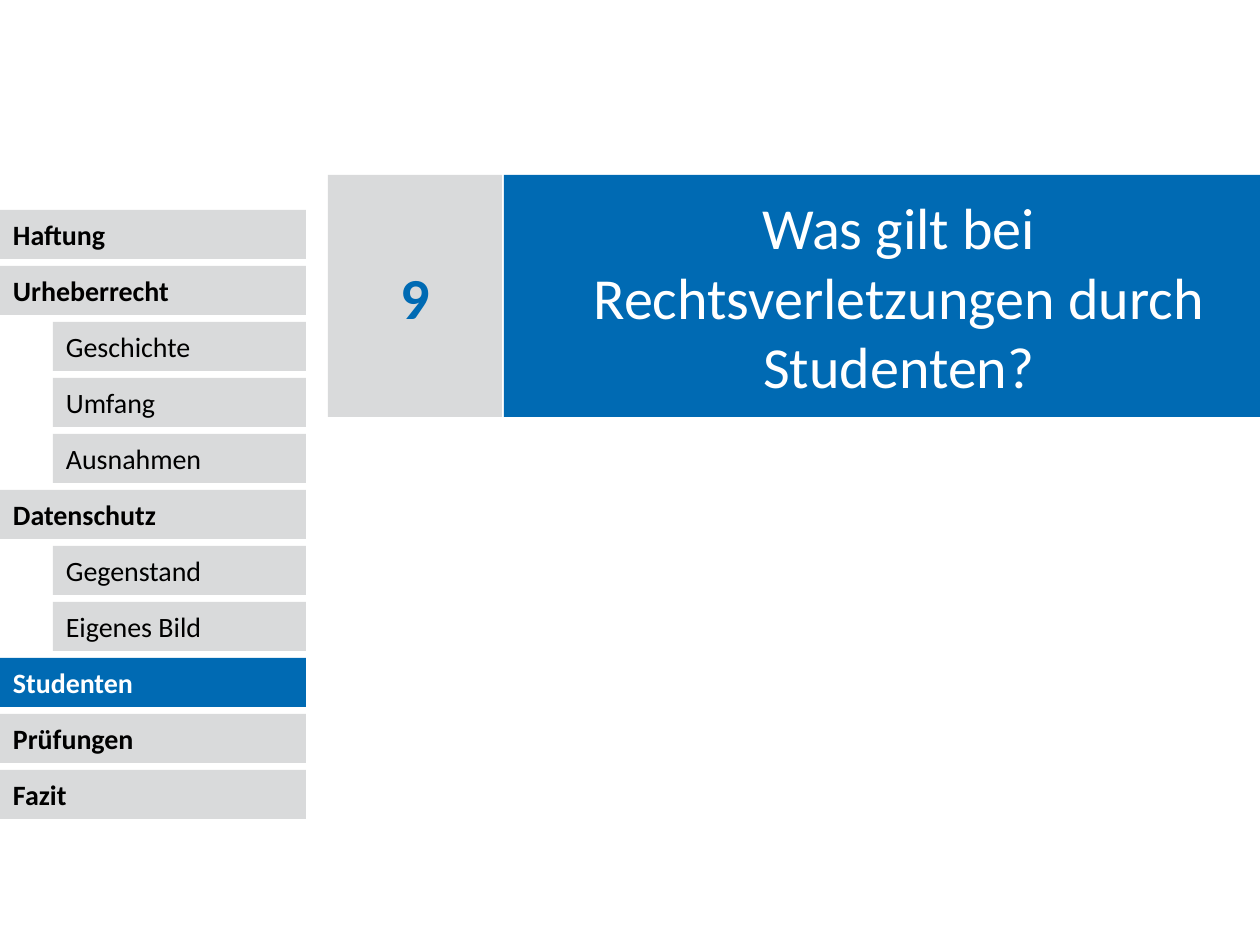
from pptx import Presentation
from pptx import util as u
from pptx.dml.color import RGBColor
from pptx.enum import shapes, text

BLUE = RGBColor(0x00, 0x6A, 0xB3)
GREY = RGBColor(0xD9, 0xDA, 0xDB)
BLACK = RGBColor(0x00, 0x00, 0x00)
WHITE = RGBColor(0xFF, 0xFF, 0xFF)

SLIDE_WIDTH, SLIDE_HEIGHT = 1260, 945
MENU_TOP, MENU_PITCH = 210, 56
MENU_RIGHT, ITEM_HEIGHT, SUB_INDENT = 306, 49, 53
HEADER_TOP, HEADER_HEIGHT = 175, 242
NUMBER_LEFT, NUMBER_WIDTH, TITLE_LEFT = 328, 174, 504

CURRENT = "Studenten"
MENU = [
    ("Haftung", []),
    ("Urheberrecht", ["Geschichte", "Umfang", "Ausnahmen"]),
    ("Datenschutz", ["Gegenstand", "Eigenes Bild"]),
    (CURRENT, []),
    ("Prüfungen", []),
    ("Fazit", []),
]


def px(length):
    return u.Emu(round(length * 914400 / 126))


class SlideBuilder:
    font_name = "Calibri"
    menu_size = 16
    header_size = 33.2

    def __init__(self, slide):
        self.slide = slide

    def box(self, left, top, width, height, content, fill, color, size,
            bold=False, align=text.PP_ALIGN.LEFT, inset=13, left_inset=13):
        shape = self.slide.shapes.add_shape(
            shapes.MSO_SHAPE.RECTANGLE, px(left), px(top), px(width), px(height))
        shape.shadow.inherit = False
        shape.fill.solid()
        shape.fill.fore_color.rgb = fill
        shape.line.fill.background()
        frame = shape.text_frame
        frame.word_wrap = True
        frame.vertical_anchor = text.MSO_ANCHOR.MIDDLE
        frame.margin_left = px(left_inset)
        frame.margin_right = px(inset)
        frame.margin_top = frame.margin_bottom = px(6)
        frame.text = content
        paragraph = frame.paragraphs[0]
        paragraph.alignment = align
        font = paragraph.runs[0].font
        font.name = self.font_name
        font.size = u.Pt(size)
        font.bold = bold
        font.color.rgb = color

    def menu_item(self, row, label, is_sub):
        left = SUB_INDENT if is_sub else 0
        is_current = label == CURRENT
        self.box(left, MENU_TOP + row * MENU_PITCH, MENU_RIGHT - left, ITEM_HEIGHT,
                 label, BLUE if is_current else GREY,
                 WHITE if is_current else BLACK, self.menu_size, bold=not is_sub)

    def header(self, number, title):
        self.box(NUMBER_LEFT, HEADER_TOP, NUMBER_WIDTH, HEADER_HEIGHT, number,
                 GREY, BLUE, self.header_size, bold=True,
                 align=text.PP_ALIGN.CENTER, inset=15, left_inset=15)
        self.box(TITLE_LEFT, HEADER_TOP, SLIDE_WIDTH - TITLE_LEFT, HEADER_HEIGHT,
                 title, BLUE, WHITE, self.header_size,
                 align=text.PP_ALIGN.CENTER, inset=15, left_inset=49)


def main():
    presentation = Presentation()
    presentation.slide_width = px(SLIDE_WIDTH)
    presentation.slide_height = px(SLIDE_HEIGHT)
    slide = presentation.slides.add_slide(presentation.slide_layouts[6])
    builder = SlideBuilder(slide)

    items = []
    for chapter, sections in MENU:
        items.append((chapter, False))
        items.extend((section, True) for section in sections)
    for row, (label, is_sub) in enumerate(items):
        builder.menu_item(row, label, is_sub)

    builder.header("9", "Was gilt bei Rechtsverletzungen durch Studenten?")
    presentation.save("out.pptx")


if __name__ == "__main__":
    main()
